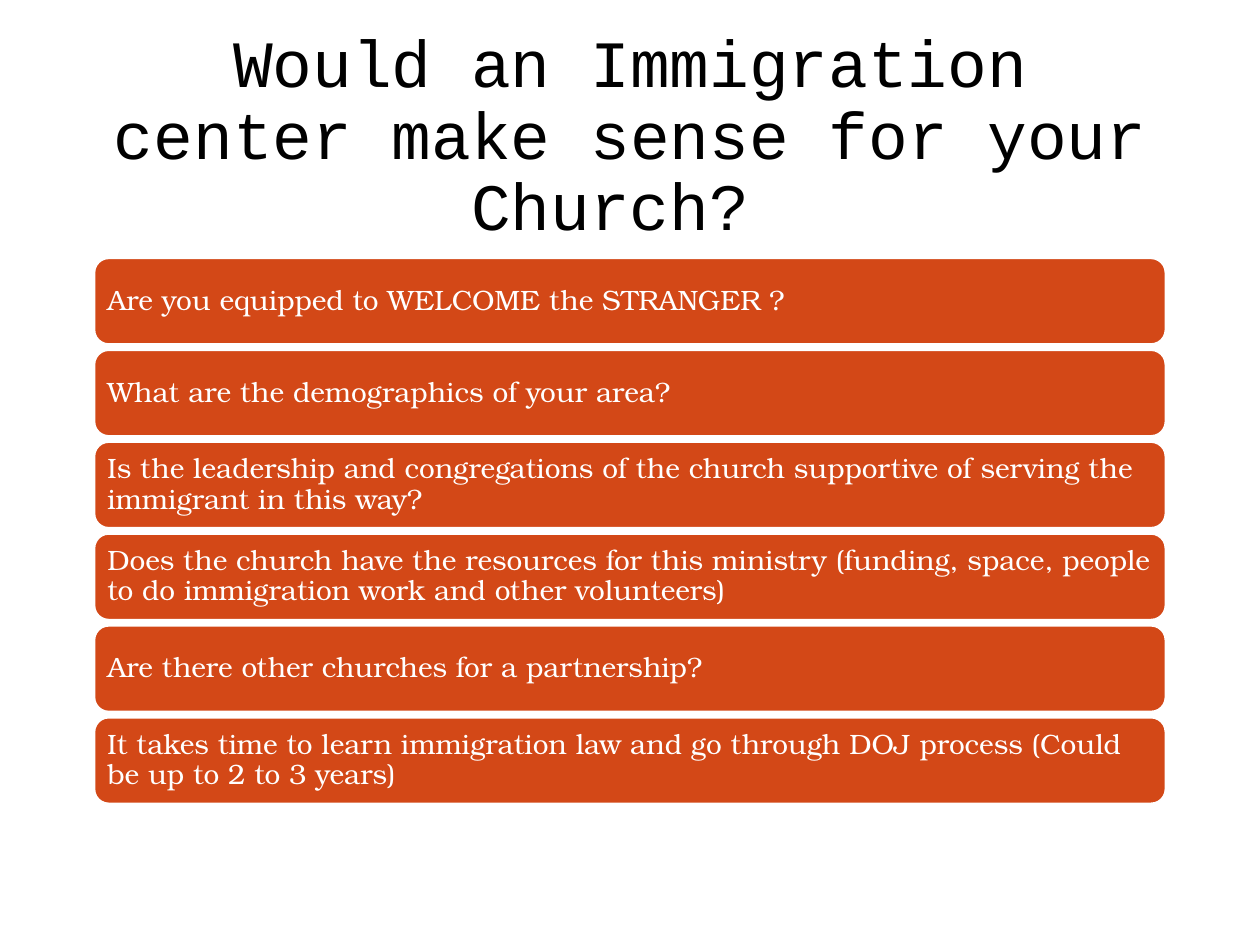
"""Build the slide of questions on opening a church immigration center."""
from pptx import Presentation
from pptx.dml.color import RGBColor
from pptx.enum import shapes, text
from pptx.util import Pt

COLORS = {"title": "000000", "bar": "D34817", "light": "FFFFFF"}
LEFT, WIDTH = 54, 612
FIRST_TOP, BAR_HEIGHT, PITCH = 147.6, 49, 52.5

QUESTIONS = [
    "Are you equipped to WELCOME the STRANGER ?",
    "What are the demographics of your area?",
    "Is the leadership and congregations of the church supportive of serving "
    "the immigrant in this way?",
    "Does the church have the resources for this ministry (funding, space, "
    "people to do immigration work and other volunteers)",
    "Are there other churches for a partnership?",
    "It takes time to learn immigration law and go through DOJ process "
    "(Could be up to 2 to 3 years)",
]


def write(holder, words, *, font, size, color, align, inset_x, inset_y):
    frame = holder.text_frame
    frame.word_wrap = True
    frame.vertical_anchor = text.MSO_ANCHOR.MIDDLE
    frame.margin_left = frame.margin_right = Pt(inset_x)
    frame.margin_top = frame.margin_bottom = Pt(inset_y)
    paragraph = frame.paragraphs[0]
    paragraph.text = words
    paragraph.alignment = align
    paragraph.line_spacing = 0.9
    for run in paragraph.runs:
        run.font.name = font
        run.font.size = Pt(size)
        run.font.color.rgb = RGBColor.from_string(COLORS[color])
    paragraph.font.size = Pt(size)
    paragraph.font.name = font


deck = Presentation()
deck.slide_width, deck.slide_height = Pt(720), Pt(540)
slide = deck.slides.add_slide(deck.slide_layouts[6])

title = slide.shapes.add_textbox(Pt(LEFT), Pt(38.2), Pt(WIDTH), Pt(126.7))
write(title, "Would an Immigration center make sense for your Church? \v",
      font="Courier New", size=37.8, color="title",
      align=text.PP_ALIGN.CENTER, inset_x=7.2, inset_y=3.6)

for row, question in enumerate(QUESTIONS):
    bar = slide.shapes.add_shape(
        shapes.MSO_SHAPE.ROUNDED_RECTANGLE,
        Pt(LEFT), Pt(FIRST_TOP + row * PITCH), Pt(WIDTH), Pt(BAR_HEIGHT))
    bar.shadow.inherit = False
    bar.fill.solid()
    bar.fill.fore_color.rgb = RGBColor.from_string(COLORS["bar"])
    bar.line.color.rgb = RGBColor.from_string(COLORS["light"])
    bar.line.width = Pt(1)
    write(bar, question, font="TeX Gyre Bonum", size=16, color="light",
          align=text.PP_ALIGN.LEFT, inset_x=5, inset_y=5)

deck.save("out.pptx")
